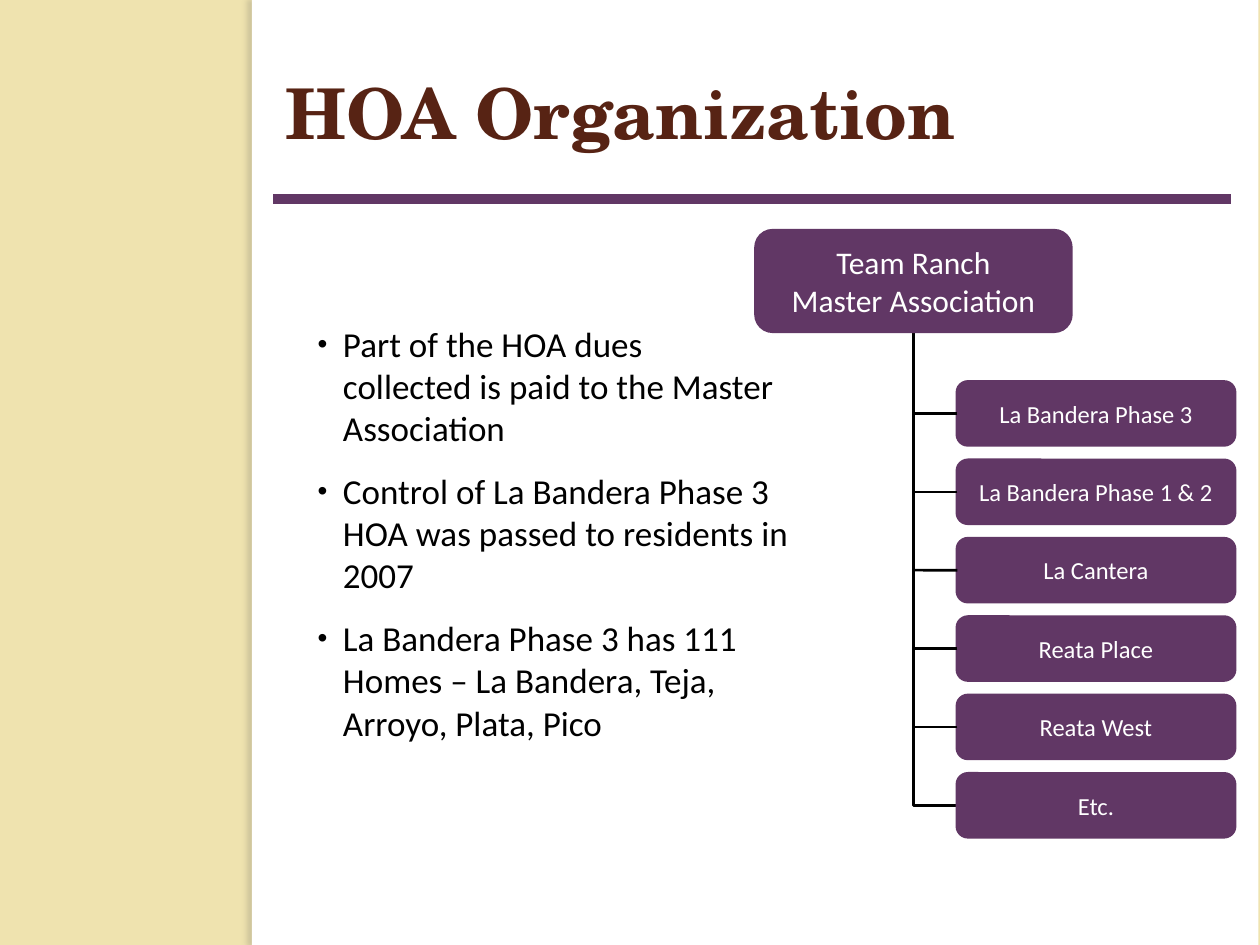
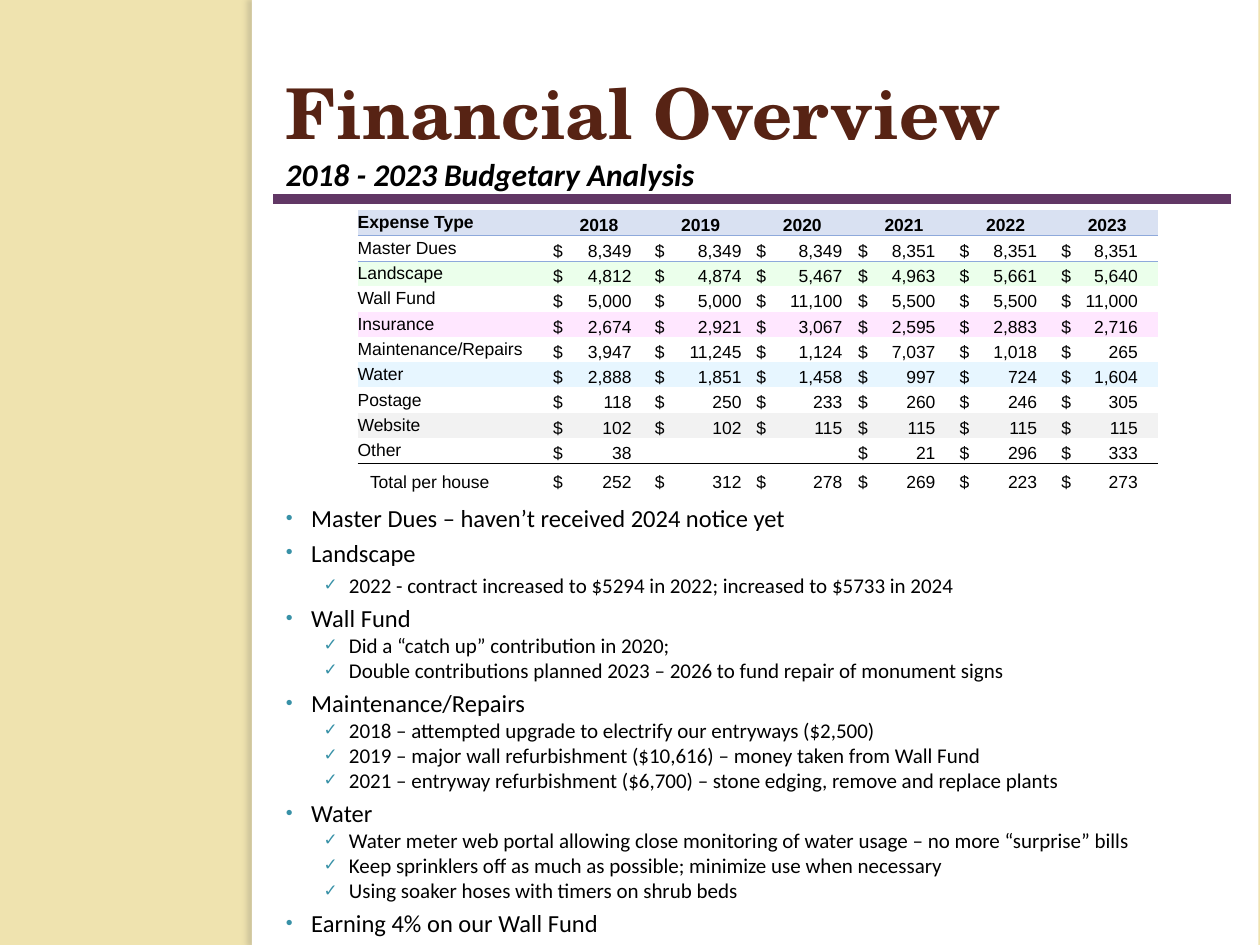
from lxml import etree
from pptx import Presentation
from pptx import util as u
from pptx.dml.color import RGBColor
from pptx.enum import shapes, text
from pptx.oxml.ns import qn

COLORS = {
    "sand": "EFE3AF", "white": "FFFFFF", "purple": "613765", "brown": "572314",
    "black": "000000", "shade": "736F63", "teal": "3891A7", "header": "D9E1F2",
    "header_rule": "8EA9DB", "green": "EBFFEB", "pink": "FFE7FF",
    "blue": "E7F6FF", "gray": "F2F2F2",
}
FORMATS = {
    "title": {"name": "TeX Gyre Schola", "size": u.Pt(40), "bold": True, "color": "brown"},
    "subtitle": {"name": "Calibri", "size": u.Pt(18), "bold": True, "italic": True, "color": "black"},
    "points": {"name": "Calibri", "size": u.Pt(20), "color": "black"},
    "topic": {"name": "Calibri", "size": u.Pt(14), "color": "black"},
    "detail": {"name": "Calibri", "size": u.Pt(12), "color": "black"},
    "master_box": {"name": "Calibri", "size": u.Pt(18), "color": "white"},
    "member_box": {"name": "Calibri", "size": u.Pt(14), "color": "white"},
    "table_head": {"name": "Arial", "size": u.Pt(10), "bold": True, "color": "black"},
    "table_text": {"name": "Arial", "size": u.Pt(10), "bold": False, "color": "black"},
}
BULLETS = [("•", 0.51), ("✓", 1.27)]
NO_STYLE = "{2D5ABB26-0587-4C30-8999-92F81FD0307C}"

MEMBERS = ["La Bandera Phase 3", "La Bandera Phase 1 & 2", "La Cantera",
           "Reata Place", "Reata West", "Etc."]
DUES_POINTS = [
    "Part of the HOA dues\vcollected is paid to the Master Association",
    "Control of La Bandera Phase 3 HOA was passed to residents in 2007",
    "La Bandera Phase 3 has 111 Homes – La Bandera, Teja, Arroyo, Plata, Pico",
]
YEARS = ["2018", "2019", "2020", "2021", "2022", "2023"]
TAB_STOPS = [1.58, 1.75, 1.73, 1.56, 1.56, 1.54]
EXPENSES = [
    ("Master Dues", None, [8349, 8349, 8349, 8351, 8351, 8351]),
    ("Landscape", "green", [4812, 4874, 5467, 4963, 5661, 5640]),
    ("Wall Fund", None, [5000, 5000, 11100, 5500, 5500, 11000]),
    ("Insurance", "pink", [2674, 2921, 3067, 2595, 2883, 2716]),
    ("Maintenance/Repairs", None, [3947, 11245, 1124, 7037, 1018, 265]),
    ("Water", "blue", [2888, 1851, 1458, 997, 724, 1604]),
    ("Postage", None, [118, 250, 233, 260, 246, 305]),
    ("Website", "gray", [102, 102, 115, 115, 115, 115]),
    ("Other", None, [38, None, None, 21, 296, 333]),
    ("Total per house", None, [252, 312, 278, 269, 223, 273]),
]
BUDGET_NOTES = [
    (0, 0, "Master Dues – haven’t received 2024 notice yet"),
    (0, 3, "Landscape"),
    (1, 3, "2022 - contract increased to $5294 in 2022; increased to $5733 in 2024"),
    (0, 3, "Wall Fund"),
    (1, 0, "Did a “catch up” contribution in 2020;"),
    (1, 0, "Double contributions planned 2023 – 2026 to fund repair of monument signs"),
    (0, 3, "Maintenance/Repairs"),
    (1, 0, "2018 – attempted upgrade to electrify our entryways ($2,500)"),
    (1, 0, "2019 – major wall refurbishment ($10,616) – money taken from Wall Fund"),
    (1, 0, "2021 – entryway refurbishment ($6,700) – stone edging, remove and replace plants"),
    (0, 3, "Water"),
    (1, 0, "Water meter web portal allowing close monitoring of water usage – no more “surprise” bills"),
    (1, 0, "Keep sprinklers off as much as possible; minimize use when necessary"),
    (1, 0, "Using soaker hoses with timers on shrub beds"),
    (0, 3, "Earning 4% on our Wall Fund"),
]


def rgb(color):
    return RGBColor.from_string(COLORS[color])


def cm(*lengths):
    return [u.Cm(length) for length in lengths]


def add_xml(parent, tag, **attributes):
    return etree.SubElement(parent, qn(tag), {k: str(v) for k, v in attributes.items()})


class Deck:
    """Hold the house style and the current slide, and draw each kind of element."""

    def __init__(self):
        self.deck = Presentation()
        self.deck.slide_width, self.deck.slide_height = cm(25.4, 19.05)
        background = self.deck.slide_master.background.fill
        background.solid()
        background.fore_color.rgb = rgb("sand")
        self.slide = None

    def new_slide(self, title):
        first = self.slide is None
        self.slide = self.deck.slides.add_slide(self.deck.slide_layouts[1])
        if first:
            self.furnish_master()
        heading = self.slide.shapes.title
        self.place(heading, 5.51, 1.27, 19.3, 2.54)
        self.set_words(heading.text_frame.paragraphs[0], title, "title", text.PP_ALIGN.LEFT)

    def furnish_master(self):
        panel = self.shape(shapes.MSO_SHAPE.RECTANGLE, (5.28, 0, 20.09, 19.05), "white")
        edge = self.shape(shapes.MSO_SHAPE.RECTANGLE, (5.08, 0, 0.2, 19.05), "white")
        effects = edge.element.spPr.find(qn("a:effectLst"))
        shadow = add_xml(effects, "a:outerShdw", blurRad=u.Pt(3), dist=u.Pt(3),
                         dir=10800000, rotWithShape=0)
        tint = add_xml(shadow, "a:srgbClr", val=COLORS["shade"])
        add_xml(tint, "a:alpha", val=25000)
        rule = self.line((5.51, 4.01), (24.82, 4.01), "purple", 6)
        master = self.deck.slide_master.shapes.element
        for order, part in enumerate([panel, edge, rule]):
            part.element.xpath(".//p:cNvPr")[0].set("id", str(20 + order))
            master.insert(2 + order, part.element)

    def place(self, holder, left, top, width, height):
        holder.left, holder.top, holder.width, holder.height = cm(left, top, width, height)
        settings = {"word_wrap": True, "auto_size": text.MSO_AUTO_SIZE.NONE,
                    "vertical_anchor": text.MSO_ANCHOR.TOP}
        for attribute, value in settings.items():
            setattr(holder.text_frame, attribute, value)

    def set_words(self, paragraph, words, style, align=None):
        paragraph.text = words
        paragraph.alignment = align
        for run in paragraph.runs:
            for attribute, value in FORMATS[style].items():
                if attribute == "color":
                    run.font.color.rgb = rgb(value)
                else:
                    setattr(run.font, attribute, value)

    def shape(self, kind, box, fill, words=(), style=None):
        drawn = self.slide.shapes.add_shape(kind, *cm(*box))
        drawn.shadow.inherit = False
        drawn.fill.solid()
        drawn.fill.fore_color.rgb = rgb(fill)
        if words:
            drawn.line.color.rgb = rgb(fill)
            drawn.line.width = u.Pt(2)
        else:
            drawn.line.fill.background()
        frame = drawn.text_frame
        frame.vertical_anchor = text.MSO_ANCHOR.MIDDLE
        for index, line in enumerate(words):
            paragraph = frame.add_paragraph() if index else frame.paragraphs[0]
            self.set_words(paragraph, line, style, text.PP_ALIGN.CENTER)
        return drawn

    def box(self, place, words, style):
        return self.shape(shapes.MSO_SHAPE.ROUNDED_RECTANGLE, place, "purple", words, style)

    def line(self, start, end, color, width):
        drawn = self.slide.shapes.add_connector(
            shapes.MSO_CONNECTOR.STRAIGHT, *cm(*start, *end))
        drawn.line.color.rgb = rgb(color)
        drawn.line.width = u.Pt(width)
        add_xml(drawn.element.spPr, "a:effectLst")
        return drawn

    def polyline(self, points, color, width):
        start, *rest = [cm(*point) for point in points]
        builder = self.slide.shapes.build_freeform(*start)
        builder.add_line_segments(rest, close=False)
        drawn = builder.convert_to_shape()
        drawn.shadow.inherit = False
        drawn.fill.background()
        drawn.line.color.rgb = rgb(color)
        drawn.line.width = u.Pt(width)

    def label(self, place, words, style):
        frame = self.slide.shapes.add_textbox(*cm(*place)).text_frame
        frame.word_wrap = False
        self.set_words(frame.paragraphs[0], words, style)

    def bullets(self, place, items, styles, bullet_color, after=0):
        body = self.slide.placeholders[1]
        self.place(body, *place)
        frame = body.text_frame
        for index, (level, before, words) in enumerate(items):
            paragraph = frame.add_paragraph() if index else frame.paragraphs[0]
            symbol, indent = BULLETS[level]
            properties = paragraph._p.get_or_add_pPr()
            properties.set("marL", str(u.Cm(indent)))
            properties.set("indent", str(-u.Cm(0.51)))
            tint = add_xml(properties, "a:buClr")
            add_xml(tint, "a:srgbClr", val=COLORS[bullet_color])
            add_xml(properties, "a:buSzPct", val=80000)
            add_xml(properties, "a:buFont", typeface="Arial")
            add_xml(properties, "a:buChar", char=symbol)
            spacing = {"level": level, "space_before": u.Pt(before),
                       "space_after": u.Pt(after), "line_spacing": 1.0}
            for attribute, value in spacing.items():
                setattr(paragraph, attribute, value)
            self.set_words(paragraph, words, styles[level], text.PP_ALIGN.LEFT)

    def table(self, place, column_widths, row_heights):
        frame = self.slide.shapes.add_table(
            len(row_heights), len(column_widths), *cm(*place))
        frame.element.xpath(".//a:tableStyleId")[0].text = NO_STYLE
        grid = frame.table
        grid.first_row = grid.horz_banding = False
        for column, width in zip(grid.columns, column_widths):
            column.width = u.Cm(width)
        for row, height in zip(grid.rows, row_heights):
            row.height = u.Cm(height)
        return grid

    def cell(self, cell, words, style, fill, anchor, align=None, indent=0, tab=None):
        layout = {"margin_left": u.Cm(indent), "margin_right": 0, "margin_top": 0,
                  "margin_bottom": 0, "vertical_anchor": anchor}
        for attribute, value in layout.items():
            setattr(cell, attribute, value)
        if fill:
            cell.fill.solid()
            cell.fill.fore_color.rgb = rgb(fill)
        else:
            cell.fill.background()
        paragraph = cell.text_frame.paragraphs[0]
        if tab:
            stops = add_xml(paragraph._p.get_or_add_pPr(), "a:tabLst")
            add_xml(stops, "a:tab", pos=u.Cm(tab), algn="r")
        self.set_words(paragraph, words, style, align)
        if not words:
            add_xml(paragraph._p, "a:endParaRPr", sz=1000)

    def row_rule(self, grid, row, color, width):
        for index, side in [(row, "a:lnB"), (row + 1, "a:lnT")]:
            for cell in grid.rows[index].cells:
                properties = cell._tc.get_or_add_tcPr()
                border = add_xml(properties, side, w=u.Pt(width))
                add_xml(add_xml(border, "a:solidFill"), "a:srgbClr", val=COLORS[color])
                properties.insert(0, border)


def organization(deck):
    deck.new_slide("HOA Organization")
    deck.bullets((6.15, 6.38, 10.16, 5.82),
                 [(0, 6 if index else 0, point) for index, point in enumerate(DUES_POINTS)],
                 ["points"], "black", after=6)
    trunk, top, step, height = 18.42, 7.7, 1.58, 1.27
    last_middle = top + step * (len(MEMBERS) - 1) + height / 2
    deck.polyline([(trunk, 6.32), (trunk, last_middle), (21.21, last_middle)], "black", 1.5)
    deck.box((15.24, 4.65, 6.35, 2.03), ["Team Ranch", "Master Association"], "master_box")
    for index, member in enumerate(MEMBERS):
        y = top + index * step
        member_box = deck.box((19.3, y, 5.59, height), [member], "member_box")
        if index < len(MEMBERS) - 1:
            middle = y + height / 2
            branch = deck.line((19.3, middle), (trunk, middle), "black", 1.5)
            branch.begin_connect(member_box, 1)


def finances(deck):
    deck.new_slide("Financial Overview")
    deck.label((5.51, 3.0, 9.42, 1.02), "2018 - 2023 Budgetary Analysis", "subtitle")
    grid = deck.table((7.21, 4.24, 16.13, 5.84), [3.84] + [2.05] * len(YEARS),
                      [0.51] * len(EXPENSES) + [0.76])
    middle, bottom = text.MSO_ANCHOR.MIDDLE, text.MSO_ANCHOR.BOTTOM
    deck.cell(grid.cell(0, 0), "Expense Type", "table_head", "header", middle)
    for column, year in enumerate(YEARS, 1):
        deck.cell(grid.cell(0, column), year, "table_head", "header", bottom,
                  text.PP_ALIGN.CENTER)
    for row, (expense, fill, amounts) in enumerate(EXPENSES, 1):
        total = row == len(EXPENSES)
        deck.cell(grid.cell(row, 0), expense, "table_text", fill, middle,
                  indent=0.25 if total else 0)
        for column, (amount, tab) in enumerate(zip(amounts, TAB_STOPS), 1):
            words = f"$\t{amount:,}" if amount else ""
            deck.cell(grid.cell(row, column), words, "table_text", fill,
                      middle if total else bottom, indent=0.1, tab=tab)
    deck.row_rule(grid, 0, "header_rule", 0.5)
    deck.row_rule(grid, len(EXPENSES) - 1, "black", 1)
    deck.bullets((5.51, 10.01, 19.69, 8.26), BUDGET_NOTES, ["topic", "detail"], "teal")


def main():
    deck = Deck()
    organization(deck)
    finances(deck)
    deck.deck.save("out.pptx")


if __name__ == "__main__":
    main()
